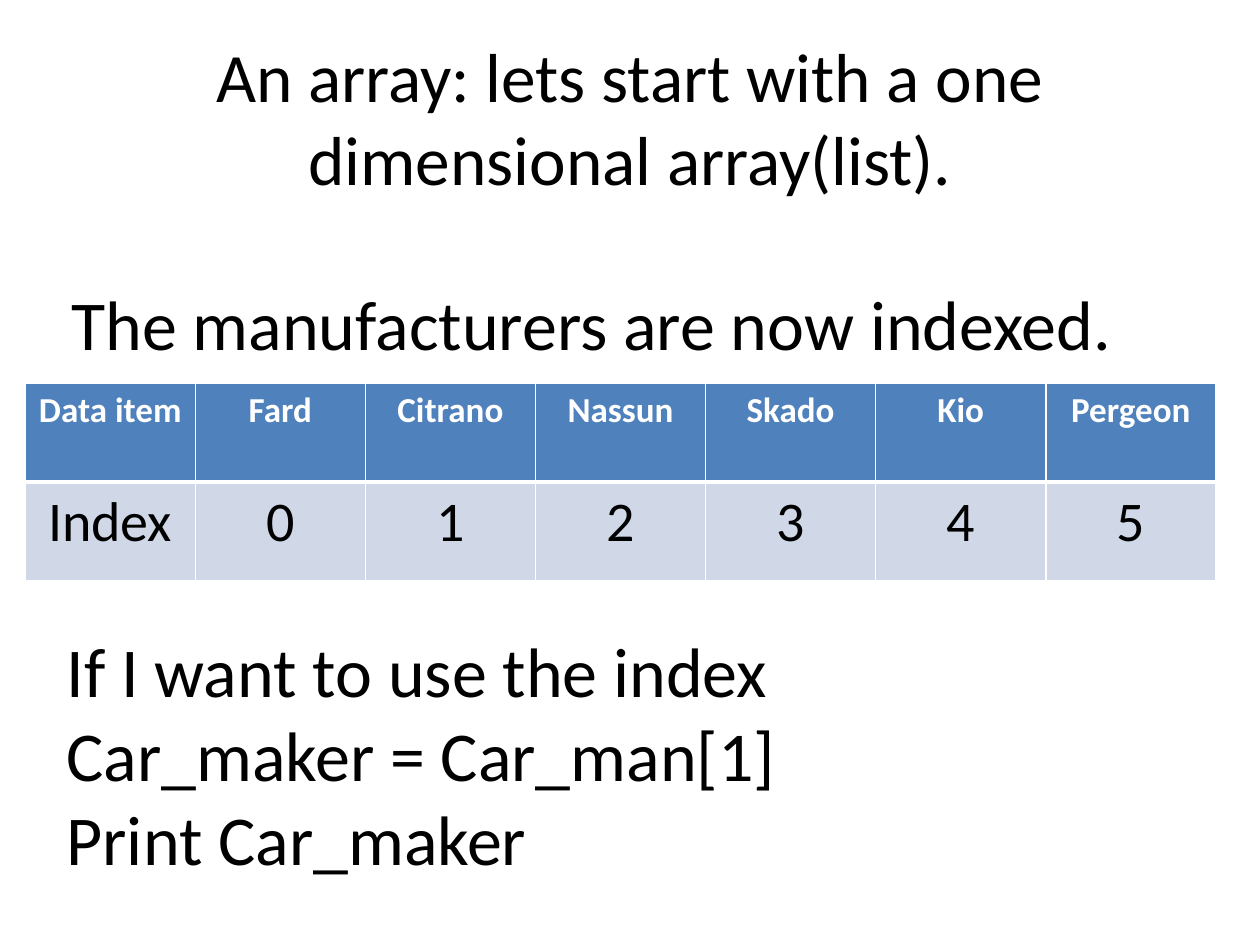
from lxml.etree import SubElement
from pptx import Presentation
from pptx.dml.color import RGBColor
from pptx.enum.text import MSO_ANCHOR, PP_ALIGN
from pptx.oxml.ns import qn
from pptx.util import Inches, Pt


def paint(hue):
    return RGBColor.from_string(hue)


def write(frame, lines, size, hue="000000", bold=False, align=PP_ALIGN.LEFT):
    frame.word_wrap = True
    look = {"name": "Calibri", "size": Pt(size), "bold": bold}
    for i, line in enumerate(lines):
        para = frame.paragraphs[0] if i == 0 else frame.add_paragraph()
        para.alignment = align
        run = para.add_run()
        run.text = line
        for key, value in look.items():
            setattr(run.font, key, value)
        run.font.color.rgb = paint(hue)


deck = Presentation()
deck.slide_width, deck.slide_height = Inches(10), Inches(7.5)
slide = deck.slides.add_slide(deck.slide_layouts[5])

# Title
title = slide.shapes.title
place = {"left": 0.5, "top": 0.3, "width": 9, "height": 1.25}
for key, value in place.items():
    setattr(title, key, Inches(value))
title.text_frame.vertical_anchor = MSO_ANCHOR.MIDDLE
write(title.text_frame,
      ["An array: lets start with a one dimensional array(list)."],
      39.6, align=PP_ALIGN.CENTER)

# Text above and below the table
notes = [
    (0.47, 2.18, 0.77, ["The manufacturers are now indexed."]),
    (0.43, 4.93, 2.12, ["If I want to use the index",
                        "Car_maker = Car_man[1]",
                        "Print Car_maker"]),
]
for left, top, height, lines in notes:
    box = slide.shapes.add_textbox(
        Inches(left), Inches(top), Inches(9.17), Inches(height))
    write(box.text_frame, lines, 40)

# Table of makers and their index
makers = ["Fard", "Citrano", "Nassun", "Skado", "Kio", "Pergeon"]
rows = [
    (["Data item"] + makers, "4F81BD",
     {"size": 20, "hue": "FFFFFF", "bold": True},
     {"lnL": 1, "lnR": 1, "lnT": 1, "lnB": 3}),
    (["Index"] + [str(i) for i in range(len(makers))], "D0D8E8",
     {"size": 32},
     {"lnL": 1, "lnR": 1, "lnT": 3, "lnB": 1}),
]
count = len(makers) + 1
table = slide.shapes.add_table(
    len(rows), count, Inches(0.2), Inches(3.04),
    Inches(1.35 * count), Inches(1.57)).table
for col in table.columns:
    col.width = Inches(1.35)

for r, (texts, fill, style, edges) in enumerate(rows):
    for c, text in enumerate(texts):
        cell = table.cell(r, c)
        write(cell.text_frame, [text], align=PP_ALIGN.CENTER, **style)
        # White cell borders go ahead of the fill
        props = cell._tc.get_or_add_tcPr()
        for edge, width in edges.items():
            line = SubElement(props, qn("a:" + edge), w=str(Pt(width)))
            solid = SubElement(line, qn("a:solidFill"))
            SubElement(solid, qn("a:srgbClr"), val="FFFFFF")
        cell.fill.solid()
        cell.fill.fore_color.rgb = paint(fill)

deck.save("out.pptx")
